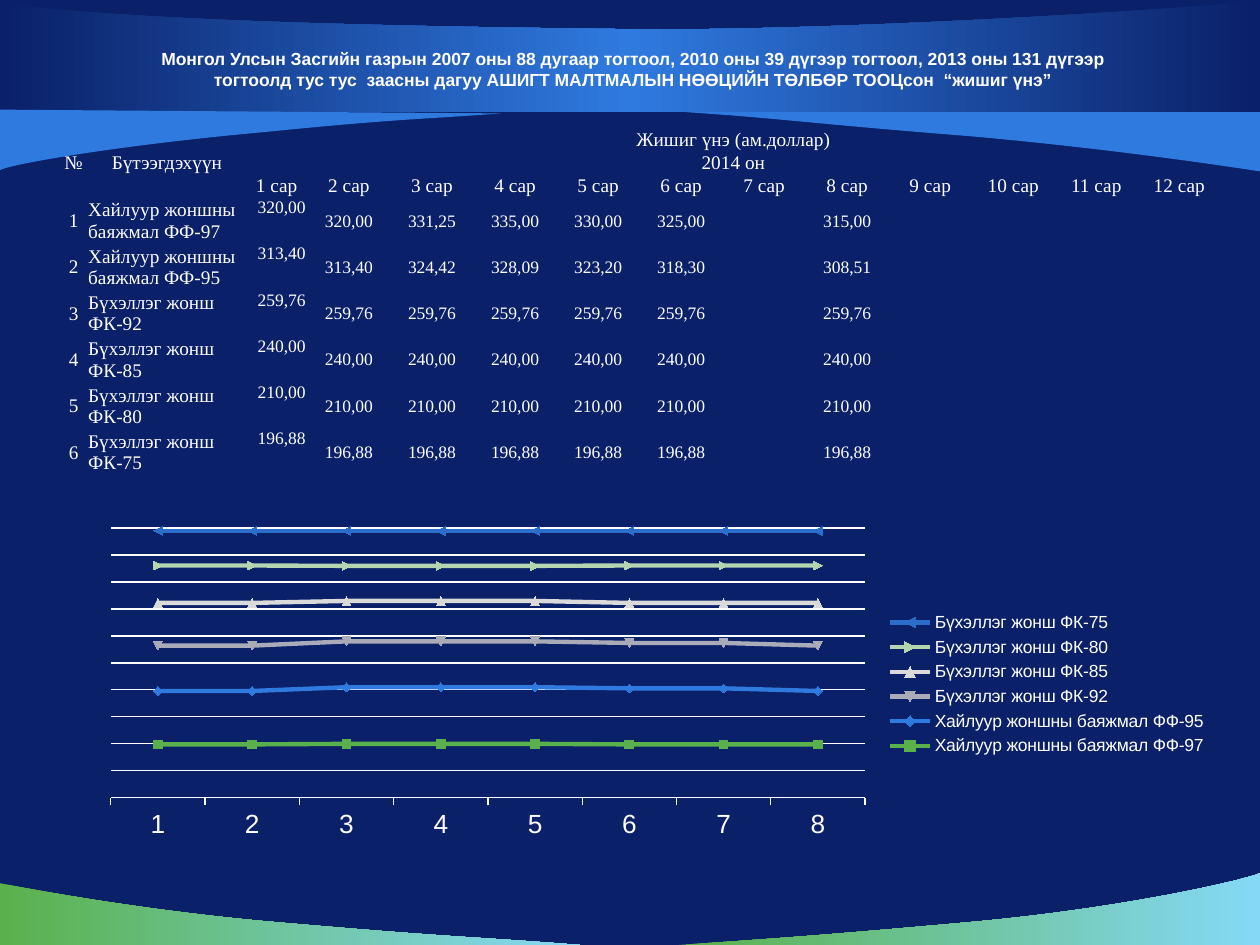
from dataclasses import dataclass
from lxml import etree
from pptx import Presentation
from pptx import util as u
from pptx.chart.data import CategoryChartData
from pptx.dml.color import RGBColor
from pptx.enum import chart as charts, text
from pptx.oxml import parse_xml
from pptx.oxml.ns import nsdecls, qn

UNIT = u.Inches(0.1)  # the page is a grid of 100 columns by 75 rows


@dataclass(frozen=True)
class Theme:
    navy: str = "0A2068"
    blue: str = "2F7ADF"
    green: str = "5AB14B"
    sky: str = "85D9F7"
    white: str = "FFFFFF"
    series: tuple = ("5AB14B", "2F7ADF", "AAABB9", "DADADA", "B5D5B1", "2A6ECA")
    sans: str = "Arial"
    serif: str = "Times New Roman"
    small: int = 10
    label: int = 11
    axis: int = 15
    base: int = 18


@dataclass(frozen=True)
class Box:
    left: float
    top: float
    width: float
    height: float

    def frame(self):
        return [round(side * UNIT) for side in (self.left, self.top, self.width, self.height)]


THEME = Theme()
NO_STYLE = "{2D5ABB26-0587-4C30-8999-92F81FD0307C}"
TITLE = ("Монгол Улсын Засгийн газрын 2007 оны 88 дугаар тогтоол, "
         "2010 оны 39 дүгээр тогтоол, 2013 оны 131 дүгээр\n"
         "тогтоолд тус тус  заасны дагуу АШИГТ МАЛТМАЛЫН НӨӨЦИЙН "
         "ТӨЛБӨР ТООЦсон  “жишиг үнэ”")
# Prices for months 1 to 6 and 8; month 7 was not published
PRICES = {
    "Хайлуур жоншны баяжмал ФФ-97": (320, 320, 331.25, 335, 330, 325, None, 315),
    "Хайлуур жоншны баяжмал ФФ-95": (313.4, 313.4, 324.42, 328.09, 323.2, 318.3, None, 308.51),
    "Бүхэллэг жонш ФК-92": (259.76,) * 6 + (None, 259.76),
    "Бүхэллэг жонш ФК-85": (240,) * 6 + (None, 240),
    "Бүхэллэг жонш ФК-80": (210,) * 6 + (None, 210),
    "Бүхэллэг жонш ФК-75": (196.88,) * 6 + (None, 196.88),
}


def color(code):
    return RGBColor.from_string(code)


def write(frame, words, font=THEME.sans, size=THEME.small, bold=False,
          align=text.PP_ALIGN.CENTER):
    para = frame.paragraphs[0]
    if not words:  # an empty line keeps only its height
        etree.SubElement(para._p, qn("a:endParaRPr")).set("sz", str(size * 100))
        return
    para.text = words
    para.alignment = align
    for span in para.runs:
        span.font.name, span.font.size, span.font.bold = font, u.Pt(size), bold
        span.font.color.rgb = color(THEME.white)


def fill_gradient(shape, codes):
    shape.fill.gradient()
    shape.fill.gradient_angle = 0
    stops = shape._element.spPr.find(qn("a:gradFill")).find(qn("a:gsLst"))
    for stop in list(stops):
        stops.remove(stop)
    for index, code in enumerate(codes):
        place = 100000 * index // (len(codes) - 1)
        stops.append(parse_xml(f'<a:gs {nsdecls("a")} pos="{place}"><a:srgbClr val="{code}"/></a:gs>'))


def add_wave(page, box, outline, *codes):
    """Outline parts are corners (x, y) or cubic curves (two controls, end)."""
    def place(x, y):
        return round((box.left + x) * UNIT), round((box.top + y) * UNIT)

    builder = page.shapes.build_freeform(*place(*outline[0]))
    builder.add_line_segments([place(*part[-2:]) for part in outline[1:]], close=True)
    shape = builder.convert_to_shape()
    # Bend the straight segments that have controls
    segments = list(shape._element.iter(qn("a:lnTo")))
    for segment, part in zip(segments, outline[1:]):
        if len(part) == 6:
            curve = etree.Element(qn("a:cubicBezTo"))
            for pair in (part[:2], part[2:4], part[4:]):
                x, y = place(*pair)
                point = etree.SubElement(curve, qn("a:pt"))
                point.set("x", str(x - shape.left))
                point.set("y", str(y - shape.top))
            segment.getparent().replace(segment, curve)
    shape.shadow.inherit = False
    shape.line.fill.background()
    if len(codes) > 1:
        fill_gradient(shape, codes)
    else:
        shape.fill.solid()
        shape.fill.fore_color.rgb = color(codes[0])


def add_footer(page, box):
    width, base = box.width, box.height
    add_wave(page, box, [(46, base), (38.4, 5.1, 35.8, 5.1, 23.2, 4),
                         (10.6, 3, 0.1, 0.8, 0, 0.8), (0, base)], THEME.green, THEME.sky)
    add_wave(page, box, [(53.9, base), (61.4, 5.2, 64.6, 5, 76.9, 3.9),
                         (89.2, 2.8, 99, 0.5, width, 0), (width, base)], THEME.green, THEME.sky)


def add_header(page, box):
    width = box.width
    # Right wing, central band, left wing
    add_wave(page, box, [(54.4, 8.9), (62, 9.4, 64.2, 9.8, 76.8, 10.8),
                         (89.4, 11.9, 99.9, 13.6, width, 13.6), (width, 8.8)], THEME.blue)
    add_wave(page, box, [(0, 8.9), (width, 8.9), (width, 0), (96.4, 0.6, 65.3, 2.6, 48.7, 2.3),
                         (32.1, 2.1, 10.1, 1.7, 0, 0.2)], THEME.navy, THEME.blue, THEME.navy)
    add_wave(page, box, [(39.8, 9), (33.1, 9.5, 31.8, 9.4, 20.8, 10.5),
                         (9.7, 11.5, 0.9, 13, 0, 13.5), (0, 8.7)], THEME.blue)


def add_title(page, box):
    frame = page.shapes.add_textbox(*box.frame()).text_frame
    frame.word_wrap = True
    frame.vertical_anchor = text.MSO_ANCHOR.MIDDLE
    write(frame, TITLE, bold=True)


def add_prices(page, box):
    head, months = 3, 12
    rows, columns = head + len(PRICES), months + 2
    table = page.shapes.add_table(rows, columns, *box.frame()).table
    table.first_row = table.horz_banding = False
    table._tbl.tblPr.find(qn("a:tableStyleId")).text = NO_STYLE
    widths = [2.3, 12.5, 4.9]
    widths += [(box.width - sum(widths)) / (months - 1)] * (months - 1)
    for column, width in zip(table.columns, widths):
        column.width = round(width * UNIT)
    step = box.height / (head + 2 * len(PRICES))  # a price row is two steps high
    for index, row in enumerate(table.rows):
        row.height = round((step if index < head else 2 * step) * UNIT)

    # Words by row and column
    words = {(0, 0): "№", (0, 1): "Бүтээгдэхүүн", (0, 2): "Жишиг үнэ (ам.доллар)", (1, 2): "2014 он"}
    words.update({(2, month + 1): f"{month} сар" for month in range(1, months + 1)})
    for row, (name, prices) in enumerate(PRICES.items(), head):
        words[row, 0], words[row, 1] = str(row - head + 1), name
        words.update({(row, column): f"{price:.2f}".replace(".", ",")
                      for column, price in enumerate(prices, 2) if price})

    for row in range(rows):
        for column in range(columns):
            cell = table.cell(row, column)
            is_price = row >= head and column >= 2
            cell.fill.background()
            cell.margin_left = cell.margin_right = cell.margin_top = cell.margin_bottom = 0
            cell.vertical_anchor = text.MSO_ANCHOR.MIDDLE
            if is_price and column == 2:
                cell.vertical_anchor = text.MSO_ANCHOR.TOP
                cell.margin_left = u.Inches(0.08)
            is_name = row >= head and column == 1
            write(cell.text_frame, words.get((row, column), ""), font=THEME.serif,
                  size=THEME.small if is_price else THEME.label,
                  align=text.PP_ALIGN.LEFT if is_name else text.PP_ALIGN.CENTER)
    for column in (0, 1):
        table.cell(0, column).merge(table.cell(head - 1, column))
    for row in (0, 1):
        table.cell(row, 2).merge(table.cell(row, columns - 1))


def add_shares(page, box):
    # Month 7 carries on the price of month 6; values are shares in whole percent
    filled = {name: [price or prices[5] for price in prices] for name, prices in PRICES.items()}
    totals = [sum(month) for month in zip(*filled.values())]
    data = CategoryChartData(number_format="0")
    data.categories = [str(month) for month in range(1, len(totals) + 1)]
    for name, prices in filled.items():
        data.add_series(name, [round(100 * price / total) for price, total in zip(prices, totals)])
    chart = page.shapes.add_chart(charts.XL_CHART_TYPE.LINE_MARKERS_STACKED_100,
                                  *box.frame(), data).chart
    chart.has_title = False
    chart.font.name, chart.font.size = THEME.sans, u.Pt(THEME.base)
    chart.font.color.rgb = color(THEME.white)
    chart.has_legend = True
    chart.legend.position = charts.XL_LEGEND_POSITION.RIGHT
    chart.legend.include_in_layout = False
    chart.legend.font.size = u.Pt(THEME.small)
    chart.legend.font.color.rgb = color(THEME.white)

    # Axes
    months, scale = chart.category_axis, chart.value_axis
    months.major_tick_mark = charts.XL_TICK_MARK.OUTSIDE
    months.tick_labels.font.size = u.Pt(THEME.axis)
    months.tick_labels.font.color.rgb = color(THEME.white)
    scale.visible = False
    scale.minimum_scale, scale.major_unit = 0.01, 0.1
    scale.has_major_gridlines = True
    for line in (months.format.line, scale.major_gridlines.format.line):
        line.color.rgb, line.width = color(THEME.white), u.Pt(0.7)

    # Lines and markers
    plot = chart.plots[0]
    plot.vary_by_categories = False
    for series, code in zip(plot.series, THEME.series):
        series.smooth = False
        series.format.line.color.rgb, series.format.line.width = color(code), u.Pt(2.5)
        series.marker.format.fill.solid()
        series.marker.format.fill.fore_color.rgb = color(code)
        series.marker.format.line.color.rgb = color(code)

    # Plot area as shares of the chart
    area = chart._chartSpace.chart.plotArea
    for old in area.findall(qn("c:layout")):
        area.remove(old)
    layout = etree.Element(qn("c:layout"))
    manual = etree.SubElement(layout, qn("c:manualLayout"))
    for tag, value in (("layoutTarget", "inner"), ("xMode", "edge"), ("yMode", "edge"),
                       ("x", 0.02), ("y", 0.02), ("w", 2 / 3), ("h", 0.83)):
        etree.SubElement(manual, qn(f"c:{tag}")).set("val", str(value))
    area.insert(0, layout)


def main():
    deck = Presentation()
    deck.slide_width, deck.slide_height = 100 * UNIT, 75 * UNIT
    page = deck.slides.add_slide(deck.slide_layouts[6])
    page.background.fill.solid()
    page.background.fill.fore_color.rgb = color(THEME.navy)
    add_footer(page, Box(0, 69.3, 100, 5.7))
    add_header(page, Box(0, 0, 100, 13.6))
    add_title(page, Box(4.8, 2.4, 90.8, 6.2))
    add_prices(page, Box(4.7, 10.2, 92.2, 22.5))
    add_shares(page, Box(7, 41.4, 89.8, 25.8))
    deck.save("out.pptx")


if __name__ == "__main__":
    main()
